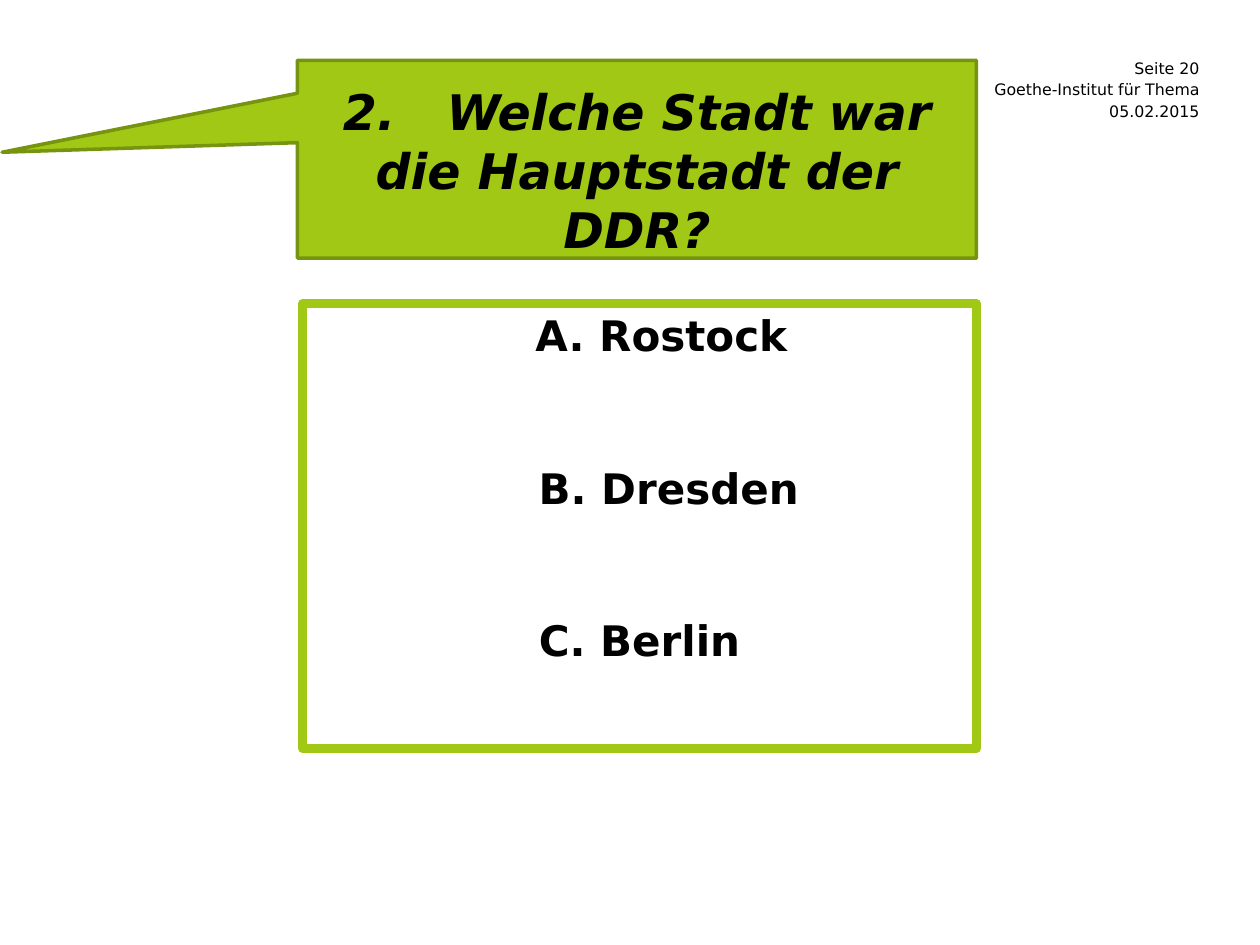
from dataclasses import dataclass

from pptx import Presentation
from pptx.dml.color import RGBColor
from pptx.enum import shapes, text
from pptx.util import Pt


@dataclass(frozen=True)
class Theme:
    face: str = "DejaVu Sans"
    ink: RGBColor = RGBColor(0, 0, 0)
    green: RGBColor = RGBColor.from_string("A0C814")
    edge: RGBColor = RGBColor.from_string("76940F")
    small: float = 9
    body: float = 24
    title: float = 28


THEME = Theme()
ALIGN = text.PP_ALIGN


def style(para, size, align, bold=False, italic=False):
    para.alignment = align
    font = para.font
    font.name, font.size = THEME.face, Pt(size)
    font.bold, font.italic = bold, italic
    font.color.rgb = THEME.ink


def add_panel(slide, kind, box, line, width, fill=None):
    panel = slide.shapes.add_shape(kind, *map(Pt, box))
    panel.shadow.inherit = False
    if fill is None:
        panel.fill.background()
    else:
        panel.fill.solid()
        panel.fill.fore_color.rgb = fill
    panel.line.color.rgb = line
    panel.line.width = Pt(width)
    panel.text_frame.word_wrap = True
    return panel


def add_meta(slide, box, lines, pitch):
    """Page details, one right-aligned line below the other."""
    left, top, width, height = box
    for i, line in enumerate(lines):
        label = slide.shapes.add_textbox(
            Pt(left), Pt(top + i * pitch), Pt(width), Pt(height))
        frame = label.text_frame
        frame.word_wrap = True
        frame.vertical_anchor = text.MSO_ANCHOR.MIDDLE
        frame.margin_left = frame.margin_right = 0
        frame.margin_top = frame.margin_bottom = 0
        para = frame.paragraphs[0]
        para.text = line
        style(para, THEME.small, ALIGN.RIGHT)


def add_question(slide, box, number, words):
    """Callout whose tip points to the left edge of the slide."""
    call = add_panel(slide, shapes.MSO_SHAPE.RECTANGULAR_CALLOUT, box,
                     THEME.edge, 2, THEME.green)
    call.adjustments[0] = -0.935
    call.adjustments[1] = -0.035
    frame = call.text_frame
    frame.vertical_anchor = text.MSO_ANCHOR.MIDDLE
    frame.margin_top, frame.margin_bottom = Pt(12), 0
    para = frame.paragraphs[0]
    style(para, THEME.title, ALIGN.CENTER, bold=True, italic=True)
    for part in (number, " ", words):
        run = para.add_run()
        run.text = part
        if part == " ":
            # Widen the gap after the number
            run.font._element.set("spc", "1950")


def add_answers(slide, box, answers, gap):
    """Framed choices, each with its own left indent."""
    panel = add_panel(slide, shapes.MSO_SHAPE.RECTANGLE, box, THEME.green, 5)
    frame = panel.text_frame
    frame.vertical_anchor = text.MSO_ANCHOR.TOP
    for i, (answer, indent) in enumerate(answers):
        para = frame.add_paragraph() if i else frame.paragraphs[0]
        para.text = answer
        para._p.get_or_add_pPr().set("marL", str(Pt(indent)))
        style(para, THEME.body, ALIGN.CENTER, bold=True)
        if i:
            para.space_before = Pt(gap)


def main():
    deck = Presentation()
    deck.slide_width, deck.slide_height = Pt(720), Pt(540)
    slide = deck.slides.add_slide(deck.slide_layouts[6])

    add_meta(slide, (527, 33, 158.4, 11.5),
             ("Seite 20", "Goethe-Institut für Thema", "05.02.2015"), 12.4)
    add_question(slide, (170, 34.5, 388, 113), "2.",
                 "Welche Stadt war die Hauptstadt der DDR?")
    add_answers(slide, (172.8, 173.5, 385.2, 254.2),
                (("A. Rostock", 25), ("B. Dresden", 33.4), ("C. Berlin", 0)),
                58.4)

    deck.save("out.pptx")


if __name__ == "__main__":
    main()
